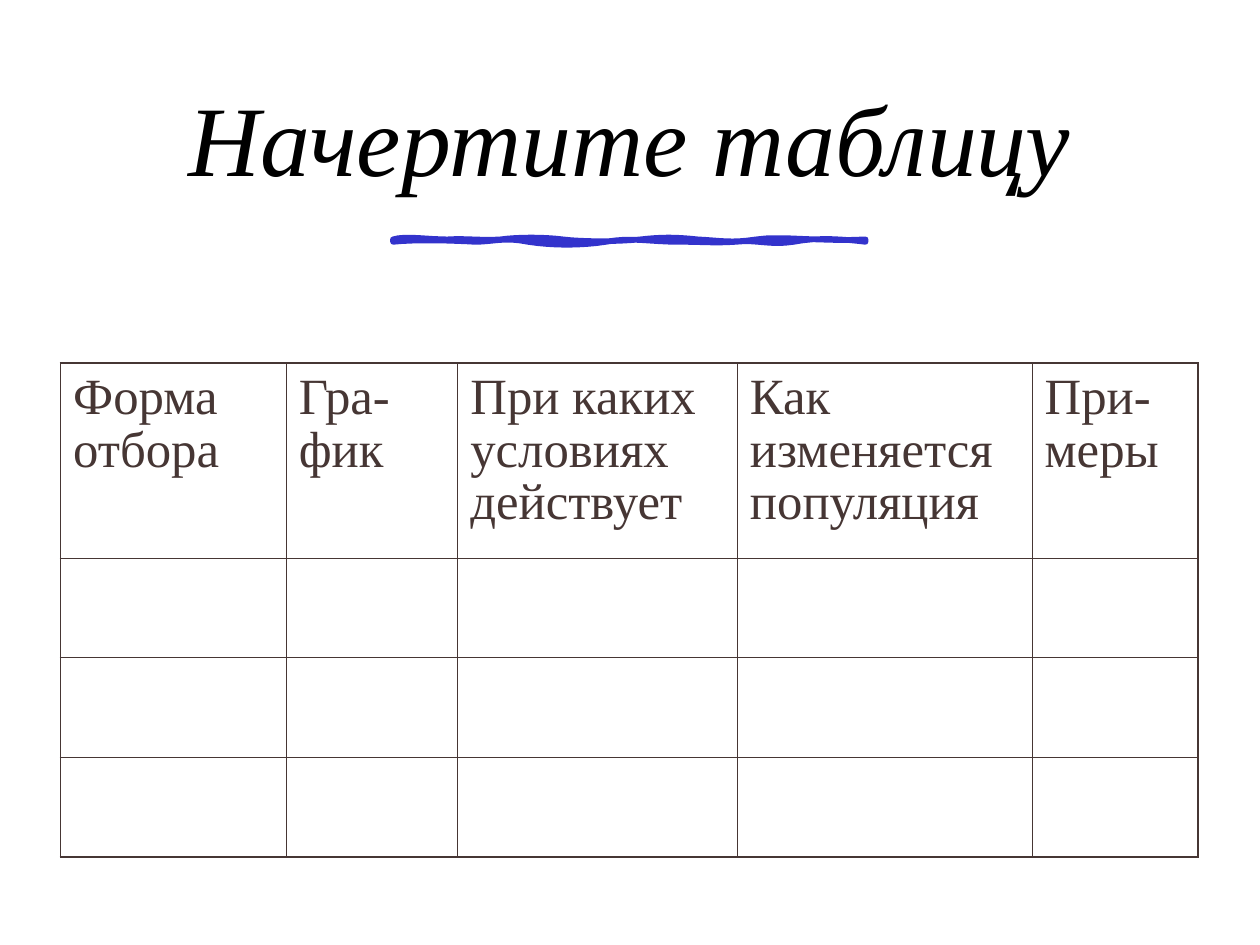
import pptx
import pptx.dml.color
import pptx.enum.text
import pptx.oxml
import pptx.oxml.ns
import pptx.util

Pt = pptx.util.Pt
INK = "463634"
HEADINGS = ["Форма отбора", "Гра-фик", "При каких условиях действует",
            "Как изменяется популяция", "При-меры"]
COLUMN_WIDTHS = [129, 98, 159.8, 168.4, 95]
ROW_HEIGHTS = [111.6, 56.9, 56.9, 56.9]
BRUSH_START = (224.6, 136.8)
BRUSH_CURVES = [
    [(231, 134.6), (244.8, 136.8), (255.6, 136.8)],
    [(265.7, 136.1), (275, 137.5), (285.8, 136.8)],
    [(296.6, 135.4), (310.3, 135.4), (321.8, 136.8)],
    [(333.4, 138.2), (352.1, 138.2), (365.8, 136.8)],
    [(378.7, 135.4), (385.2, 135.4), (398.9, 136.8)],
    [(412.6, 137.5), (417.6, 139), (432, 136.8)],
    [(446.4, 134.6), (468, 138.2), (494.6, 136.8)],
    [(494.6, 137.5), (494.6, 137.5), (494.6, 138.2)],
    [(483, 136.8), (467.3, 135.4), (453.6, 138.2)],
    [(440, 140.4), (432.7, 136.8), (420.5, 138.2)],
    [(408.2, 139), (403.2, 138.2), (387.4, 138.2)],
    [(370.8, 138.2), (360, 135.4), (346.3, 138.2)],
    [(331.9, 140.4), (316, 140.4), (301.7, 138.2)],
    [(288, 135.4), (282.2, 138.2), (271.4, 138.2)],
    [(260.6, 137.5), (236.9, 136.8), (224.6, 138.2)],
]


def colour(hex_code):
    return pptx.dml.color.RGBColor.from_string(hex_code)


def curve_points(start, curves, steps=8):
    points = []
    for first, second, end in curves:
        for step in range(1, steps + 1):
            t = step / steps
            weights = ((1 - t) ** 3, 3 * t * (1 - t) ** 2, 3 * t * t * (1 - t), t ** 3)
            corners = (start, first, second, end)
            points.append(tuple(sum(w * c[axis] for w, c in zip(weights, corners))
                                for axis in (0, 1)))
        start = end
    return points


class TableSlide:
    """Holds the type style and the current slide, and draws each kind of element."""

    def __init__(self, slide, font_name):
        self.slide = slide
        self.font_name = font_name

    def add_words(self, paragraph, words, size, hex_code, spacing, italic=False):
        paragraph.line_spacing = spacing
        run = paragraph.add_run()
        run.text = words
        run.font.name = self.font_name
        run.font.size = Pt(size)
        run.font.italic = italic
        run.font.color.rgb = colour(hex_code)

    def title(self, words, left, top, width, height):
        frame = self.slide.shapes.add_textbox(
            Pt(left), Pt(top), Pt(width), Pt(height)).text_frame
        frame.word_wrap = True
        frame.vertical_anchor = pptx.enum.text.MSO_ANCHOR.MIDDLE
        heading = frame.paragraphs[0]
        heading.alignment = pptx.enum.text.PP_ALIGN.CENTER
        heading.space_after = Pt(6)
        self.add_words(heading, words, 57, "000000", 0.9, italic=True)

    def brush_stroke(self, start, curves, hex_code):
        builder = self.slide.shapes.build_freeform(
            Pt(start[0]), Pt(start[1]), scale=1)
        builder.add_line_segments(
            [(Pt(x), Pt(y)) for x, y in curve_points(start, curves)], close=True)
        stroke = builder.convert_to_shape()
        stroke.shadow.inherit = False
        stroke.fill.solid()
        stroke.fill.fore_color.rgb = colour(hex_code)
        stroke.line.color.rgb = colour(hex_code)
        stroke.line.width = Pt(3.25)

    def border(self, cell, outer_sides):
        properties = cell._tc.get_or_add_tcPr()
        for index, side in enumerate("LRTB"):
            width = Pt(1.08 if side in outer_sides else 0.45)
            properties.insert(index, pptx.oxml.parse_xml(
                f'<a:ln{side} {pptx.oxml.ns.nsdecls("a")} w="{width}"><a:solidFill>'
                f'<a:srgbClr val="{INK}"/></a:solidFill></a:ln{side}>'))

    def table(self, headings, left, top, widths, heights):
        table = self.slide.shapes.add_table(
            len(heights), len(widths), Pt(left), Pt(top),
            Pt(sum(widths)), Pt(sum(heights))).table
        table.first_row = table.horz_banding = False
        for column, width in zip(table.columns, widths):
            column.width = Pt(width)
        last_row, last_column = len(heights) - 1, len(widths) - 1
        for r, height in enumerate(heights):
            table.rows[r].height = Pt(height)
            for c in range(len(widths)):
                cell = table.cell(r, c)
                cell.fill.background()
                edges = {"L": c == 0, "R": c == last_column,
                         "T": r == 0, "B": r == last_row}
                self.border(cell, [side for side, outer in edges.items() if outer])
        for c, words in enumerate(headings):
            cell = table.cell(0, c)
            cell.margin_left = cell.margin_right = Pt(7.2)
            cell.margin_top, cell.margin_bottom = Pt(5.8), Pt(3.6)
            self.add_words(cell.text_frame.paragraphs[0], words, 29, INK, 0.93)


def main():
    deck = pptx.Presentation()
    deck.slide_width, deck.slide_height = Pt(720), Pt(540)
    page = TableSlide(deck.slides.add_slide(deck.slide_layouts[6]), "Times New Roman")
    page.title("Начертите таблицу", 37.4, 33.1, 644.4, 98.6)
    page.brush_stroke(BRUSH_START, BRUSH_CURVES, "3333CC")
    page.table(HEADINGS, 34.6, 207.4, COLUMN_WIDTHS, ROW_HEIGHTS)
    deck.save("out.pptx")


if __name__ == "__main__":
    main()
